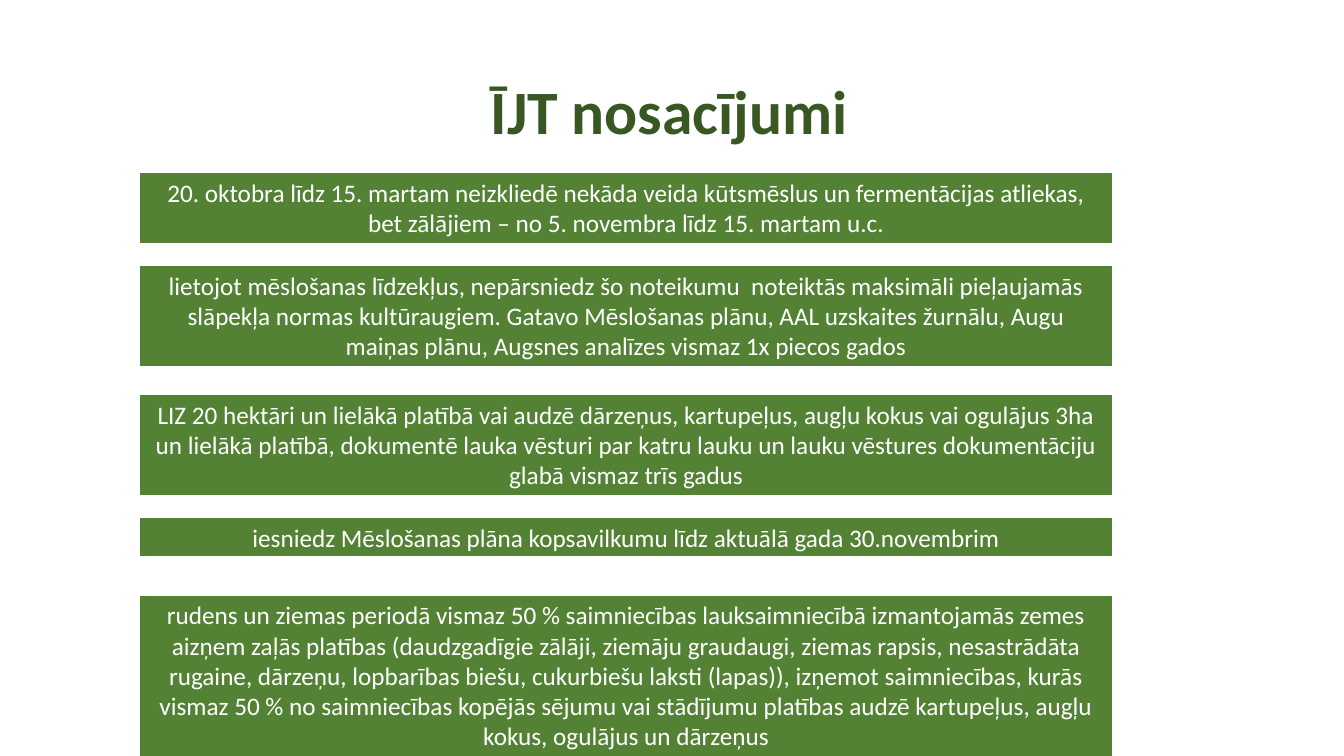
from dataclasses import dataclass

from pptx import Presentation
from pptx.dml.color import RGBColor
from pptx.enum.shapes import MSO_SHAPE as Preset
from pptx.enum.text import MSO_ANCHOR as Anchor, MSO_AUTO_SIZE as AutoSize, PP_ALIGN as Align
from pptx.slide import Slide
from pptx.text.text import TextFrame
from pptx.util import Inches, Pt

DARK_GREEN = "385723"
GREEN = "548235"
WHITE = "FFFFFF"
BAR_LEFT = 1.38
BAR_WIDTH = 9.66


@dataclass(frozen=True)
class Condition:
    top: float
    height: float
    text: str


CONDITIONS = [
    Condition(1.71, 0.71,
              "20. oktobra līdz 15. martam neizkliedē nekāda veida kūtsmēslus un "
              "fermentācijas atliekas, bet zālājiem – no 5. novembra līdz 15. martam u.c."),
    Condition(2.63, 1.01,
              "lietojot mēslošanas līdzekļus, nepārsniedz šo noteikumu  noteiktās "
              "maksimāli pieļaujamās slāpekļa normas kultūraugiem. Gatavo Mēslošanas "
              "plānu, AAL uzskaites žurnālu, Augu maiņas plānu, Augsnes analīzes "
              "vismaz 1x piecos gados"),
    Condition(3.91, 1.01,
              "LIZ 20 hektāri un lielākā platībā vai audzē dārzeņus, kartupeļus, augļu "
              "kokus vai ogulājus 3ha un lielākā platībā, dokumentē lauka vēsturi par "
              "katru lauku un lauku vēstures dokumentāciju glabā vismaz trīs gadus"),
    Condition(5.13, 0.4,
              "iesniedz Mēslošanas plāna kopsavilkumu līdz aktuālā gada 30.novembrim"),
    Condition(5.9, 1.62,
              "rudens un ziemas periodā vismaz 50 % saimniecības lauksaimniecībā "
              "izmantojamās zemes aizņem zaļās platības (daudzgadīgie zālāji, ziemāju "
              "graudaugi, ziemas rapsis, nesastrādāta rugaine, dārzeņu, lopbarības "
              "biešu, cukurbiešu laksti (lapas)), izņemot saimniecības, kurās vismaz "
              "50 % no saimniecības kopējās sējumu vai stādījumu platības audzē "
              "kartupeļus, augļu kokus, ogulājus un dārzeņus"),
]


def color(value: str) -> RGBColor:
    return RGBColor.from_string(value)


def write_centered(frame: TextFrame, text: str, font_color: str, frame_format: dict,
                   font_format: dict) -> None:
    for name, value in frame_format.items():
        setattr(frame, name, value)
    paragraph = frame.paragraphs[0]
    paragraph.alignment = Align.CENTER
    run = paragraph.add_run()
    run.text = text
    for name, value in font_format.items():
        setattr(run.font, name, value)
    run.font.color.rgb = color(font_color)


def add_title(slide: Slide, text: str) -> None:
    box = slide.shapes.add_textbox(Inches(2.78), Inches(0.68), Inches(7.72), Inches(0.79))
    margins = {f"margin_{side}": 0 for side in ("left", "top", "right", "bottom")}
    write_centered(box.text_frame, text, DARK_GREEN,
                   {"word_wrap": True, "vertical_anchor": Anchor.BOTTOM, **margins},
                   {"name": "Calibri", "size": Pt(44), "bold": True})
    box.text_frame.paragraphs[0].line_spacing = 0.9


def add_condition(slide: Slide, condition: Condition) -> None:
    bar = slide.shapes.add_shape(Preset.RECTANGLE, Inches(BAR_LEFT), Inches(condition.top),
                                 Inches(BAR_WIDTH), Inches(condition.height))
    bar.shadow.inherit = False
    bar.fill.solid()
    bar.fill.fore_color.rgb = color(GREEN)
    bar.line.color.rgb = color(WHITE)
    bar.line.width = Pt(1.5)
    write_centered(bar.text_frame, condition.text, WHITE,
                   {"word_wrap": True, "vertical_anchor": Anchor.TOP,
                    "auto_size": AutoSize.SHAPE_TO_FIT_TEXT},
                   {"name": "Calibri", "size": Pt(18)})


def main() -> None:
    presentation = Presentation()
    presentation.slide_width = Inches(13.33)
    presentation.slide_height = Inches(7.5)
    slide = presentation.slides.add_slide(presentation.slide_layouts[6])
    add_title(slide, "ĪJT nosacījumi")
    for condition in CONDITIONS:
        add_condition(slide, condition)
    presentation.save("out.pptx")


if __name__ == "__main__":
    main()
